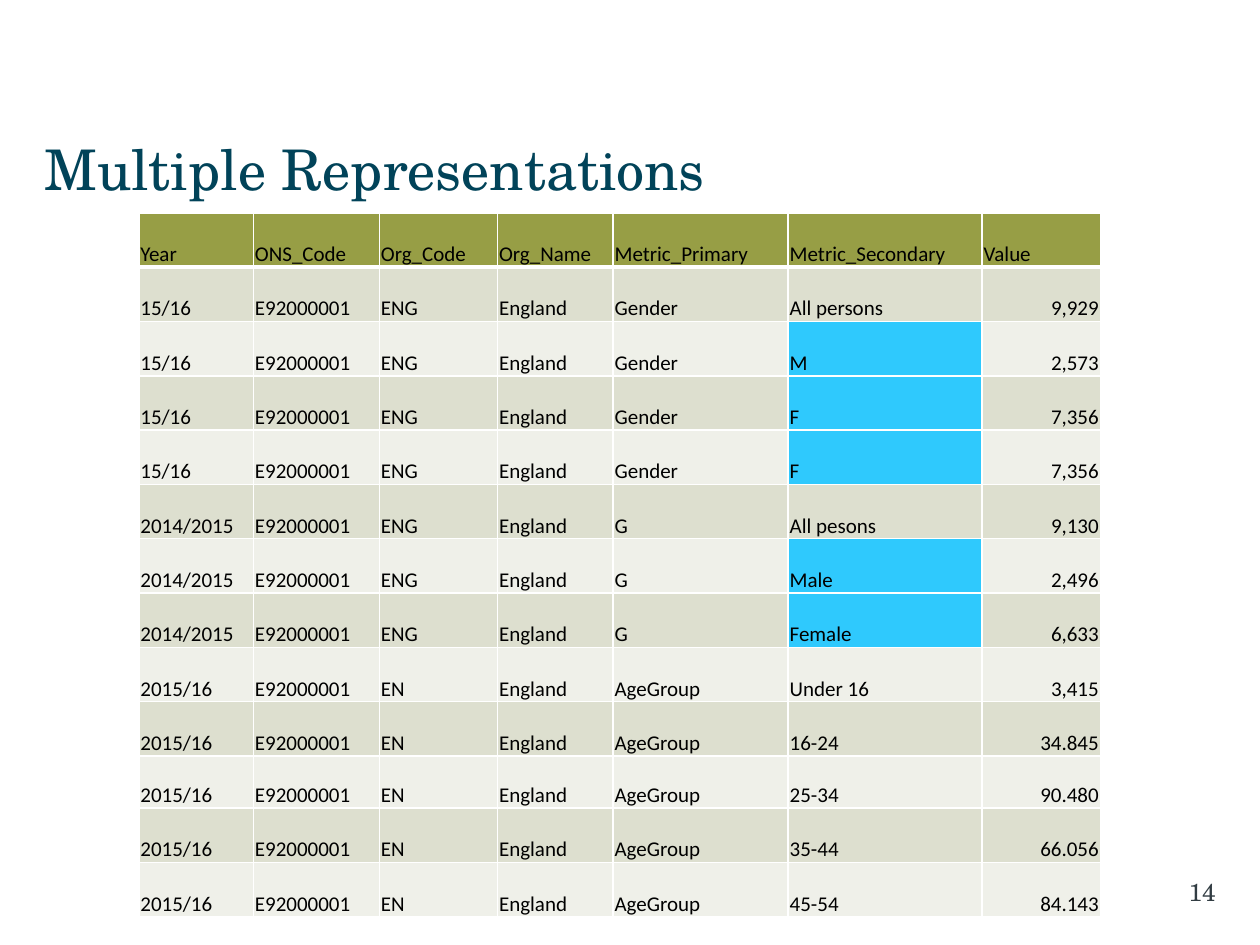
from lxml import etree
from pptx import Presentation
from pptx.dml.color import RGBColor
from pptx.enum.text import MSO_ANCHOR, MSO_AUTO_SIZE, PP_ALIGN
from pptx.oxml.ns import qn
from pptx.util import Cm, Pt

LEFT, RIGHT = PP_ALIGN.LEFT, PP_ALIGN.RIGHT
MIDDLE, BOTTOM = MSO_ANCHOR.MIDDLE, MSO_ANCHOR.BOTTOM
NO_FIT = MSO_AUTO_SIZE.NONE
TITLE_ONLY = 5

COLOURS = {
    "title": "014359",
    "number": "323D43",
    "text": "000000",
    "header": "979E45",
    "dark band": "DDDFCF",
    "light band": "EFF0E9",
    "highlight": "2FC9FD",
    "border": "FFFFFF",
}

HEADINGS = ["Year", "ONS_Code", "Org_Code", "Org_Name",
            "Metric_Primary", "Metric_Secondary", "Value"]
GROUPS = [
    ("15/16", "ENG", "Gender",
     [("All persons", "9,929"), ("M", "2,573"), ("F", "7,356"), ("F", "7,356")]),
    ("2014/2015", "ENG", "G",
     [("All pesons", "9,130"), ("Male", "2,496"), ("Female", "6,633")]),
    ("2015/16", "EN", "AgeGroup",
     [("Under 16", "3,415"), ("16-24", "34.845"), ("25-34", "90.480"),
      ("35-44", "66.056"), ("45-54", "84.143")]),
]
RECORDS = [
    [year, "E92000001", code, "England", metric, category, value]
    for year, code, metric, measures in GROUPS
    for category, value in measures
]
HIGHLIGHTED = {"M", "F", "Male", "Female"}
COLUMN_WIDTHS = [2.31, 2.54, 2.38, 2.33, 3.53, 3.91, 2.38]
TABLE_HEIGHT = 14.19
SHORT_ROW, SHORT_HEIGHT = 10, 1.05


class SlideBuilder:
    """Holds the slide style and adds each kind of element to the page."""

    serif = "TeX Gyre Schola"
    sans = "Calibri"

    def __init__(self, deck):
        self.page = deck.slides.add_slide(deck.slide_layouts[TITLE_ONLY])

    def colour(self, name):
        return RGBColor.from_string(COLOURS[name])

    def add_text(self, para, text, font, size, colour, align=LEFT):
        para.alignment = align
        span = para.add_run()
        span.text = text
        span.font.name = font
        span.font.size = Pt(size)
        span.font.color.rgb = self.colour(colour)

    def place(self, box, left, top, width, height):
        box.left, box.top = Cm(left), Cm(top)
        box.width, box.height = Cm(width), Cm(height)

    def title(self, text):
        box = self.page.shapes.title
        self.place(box, 0.89, 2.49, 23.6, 1.8)
        frame = box.text_frame
        frame.auto_size = NO_FIT
        frame.vertical_anchor = MIDDLE
        frame.margin_left = 0
        self.add_text(frame.paragraphs[0], text, self.serif, 32, "title")

    def page_number(self, text):
        box = self.page.shapes.add_textbox(Cm(19.63), Cm(17.55), Cm(4.88), Cm(0.86))
        frame = box.text_frame
        frame.word_wrap = True
        frame.margin_right = 0
        self.add_text(frame.paragraphs[0], text, self.serif, 14, "number", RIGHT)

    def border(self, cell, side, points):
        line = etree.SubElement(cell._tc.get_or_add_tcPr(), qn(f"a:ln{side}"),
                                w=str(Pt(points)))
        fill = etree.SubElement(line, qn("a:solidFill"))
        etree.SubElement(fill, qn("a:srgbClr"), val=COLOURS["border"])

    def cell(self, cell, text, fill, align, top_line, bottom_line):
        for side, points in zip("LRTB", (1, 1, top_line, bottom_line)):
            self.border(cell, side, points)
        cell.fill.solid()
        cell.fill.fore_color.rgb = self.colour(fill)
        cell.vertical_anchor = BOTTOM
        cell.margin_left = cell.margin_right = cell.margin_top = Cm(0.03)
        cell.margin_bottom = 0
        self.add_text(cell.text_frame.paragraphs[0], text, self.sans, 12, "text", align)

    def table(self, headings, records):
        rows = [headings, *records]
        table = self.page.shapes.add_table(
            len(rows), len(headings), Cm(2.8), Cm(4.29),
            Cm(sum(COLUMN_WIDTHS)), Cm(TABLE_HEIGHT)).table
        for column, width in zip(table.columns, COLUMN_WIDTHS):
            column.width = Cm(width)
        row_height = (TABLE_HEIGHT - SHORT_HEIGHT) / (len(rows) - 1)
        for r, values in enumerate(rows):
            table.rows[r].height = Cm(SHORT_HEIGHT if r == SHORT_ROW else row_height)
            band = "header" if r == 0 else "dark band" if r % 2 else "light band"
            for c, text in enumerate(values):
                fill = "highlight" if text in HIGHLIGHTED else band
                align = RIGHT if r and c == len(headings) - 1 else LEFT
                self.cell(table.cell(r, c), text, fill, align,
                          3 if r == 1 else 1, 3 if r == 0 else 1)


def main():
    deck = Presentation()
    deck.slide_width, deck.slide_height = Cm(25.4), Cm(19.05)
    builder = SlideBuilder(deck)
    builder.page_number("14")
    builder.table(HEADINGS, RECORDS)
    builder.title("Multiple Representations")
    deck.save("out.pptx")


if __name__ == "__main__":
    main()
